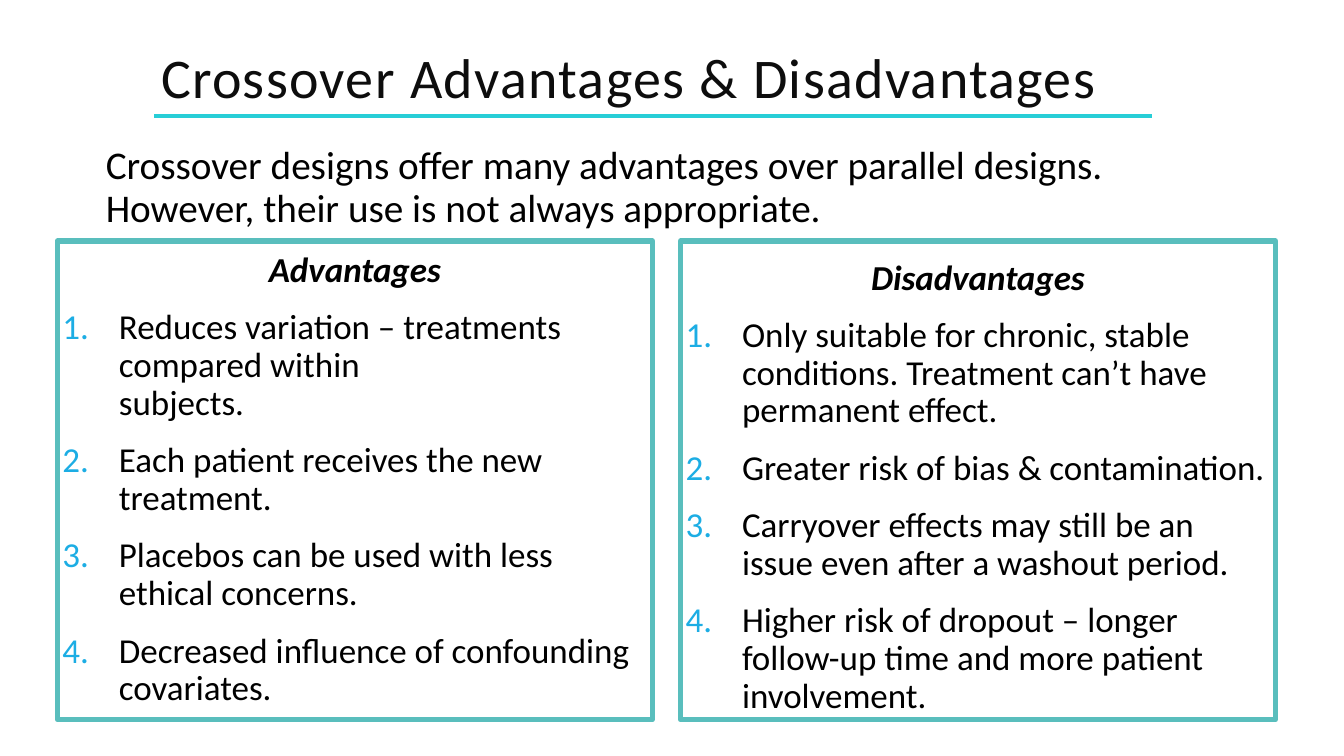
"""Build a slide that sets crossover design advantages beside disadvantages."""
from dataclasses import dataclass

from lxml import etree
from pptx import Presentation
from pptx import util as u
from pptx.dml.color import RGBColor
from pptx.enum import shapes, text
from pptx.oxml.ns import qn


@dataclass(frozen=True)
class Theme:
    """Colours, font and type sizes of the slide."""
    font: str = "Calibri"
    ink: str = "000000"
    title_ink: str = "0D0D0D"
    paper: str = "FFFFFF"
    rule: str = "27CED7"
    border: str = "59BEBD"
    number: str = "1CADE4"
    title_size: int = 40
    intro_size: int = 28
    panel_size: int = 25


THEME = Theme()
WIDTH, HEIGHT = 13.33, 7.5
PANEL_LEFT, PANEL_TOP, PANEL_PITCH = 0.57, 2.39, 6.18
PANEL_WIDTH, PANEL_HEIGHT = 5.9, 4.75
INSET, HANG = 0.05, 0.56

INTRO = ("Crossover designs offer many advantages over parallel designs. "
         "However, their use is not always appropriate.")
PANELS = [
    ("Advantages", (INSET, INSET), [
        "Reduces variation – treatments compared within\vsubjects.",
        "Each patient receives the new treatment.",
        "Placebos can be used with less ethical concerns.",
        "Decreased influence of confounding covariates.",
    ]),
    ("Disadvantages", (3 * INSET, 0), [
        "Only suitable for chronic, stable conditions. "
        "Treatment can’t have permanent effect.",
        "Greater risk of bias & contamination.",
        "Carryover effects may still be an issue even after a washout period.",
        "Higher risk of dropout – longer follow-up time and more patient "
        "involvement.",
    ]),
]


def set_font(paragraph, size, color=THEME.ink, bold=False, italic=False):
    """Format all the text of a paragraph."""
    font = paragraph.font
    font.name, font.size = THEME.font, u.Pt(size)
    font.bold, font.italic = bold, italic
    font.color.rgb = RGBColor.from_string(color)


def set_spacing(paragraph, before, line=0.9, after=2):
    """Set the line spacing and the gaps around a paragraph."""
    paragraph.line_spacing = line
    paragraph.space_before, paragraph.space_after = u.Pt(before), u.Pt(after)


def set_frame(frame, top=INSET, bottom=INSET):
    """Make a text frame wrap, with narrow margins."""
    frame.word_wrap = True
    frame.margin_left = frame.margin_right = u.Inches(INSET)
    frame.margin_top, frame.margin_bottom = u.Inches(top), u.Inches(bottom)


def number_item(paragraph):
    """Give a paragraph a coloured automatic number and a hanging indent."""
    props = paragraph._p.get_or_add_pPr()
    props.set("marL", str(u.Inches(HANG)))
    props.set("indent", str(-u.Inches(HANG)))
    color = etree.SubElement(props, qn("a:buClr"))
    etree.SubElement(color, qn("a:srgbClr"), val=THEME.number)
    etree.SubElement(props, qn("a:buFont"), typeface="+mj-lt")
    etree.SubElement(props, qn("a:buAutoNum"), type="arabicPeriod")


def add_title(slide, wording):
    """Place the title and the rule under it."""
    title = slide.shapes.title
    title.left, title.top = u.Inches(1.25), 0
    title.width, title.height = u.Inches(9.98), u.Inches(1.64)
    frame = title.text_frame
    frame.auto_size = text.MSO_AUTO_SIZE.NONE
    frame.vertical_anchor = text.MSO_ANCHOR.MIDDLE
    heading = frame.paragraphs[0]
    heading.text, heading.alignment = wording, text.PP_ALIGN.CENTER
    set_spacing(heading, 0, line=0.8, after=0)
    set_font(heading, THEME.title_size, THEME.title_ink)
    heading.runs[0]._r.get_or_add_rPr().set("spc", "100")

    rule = slide.shapes.add_connector(
        shapes.MSO_CONNECTOR.STRAIGHT,
        u.Inches(1.53), u.Inches(1.15), u.Inches(11.43), u.Inches(1.15))
    rule.line.color.rgb = RGBColor.from_string(THEME.rule)
    rule.line.width = u.Pt(3)
    etree.SubElement(rule._element.spPr, qn("a:effectLst"))


def add_intro(slide):
    """Add the introductory sentences."""
    intro = slide.shapes.add_textbox(
        u.Inches(1), u.Inches(1.4), u.Inches(10.47), u.Inches(0.95))
    set_frame(intro.text_frame)
    paragraph = intro.text_frame.paragraphs[0]
    paragraph.text = INTRO
    set_spacing(paragraph, 0)
    set_font(paragraph, THEME.intro_size)


def add_panel(slide, column, heading, margins, items):
    """Add one bordered panel with a heading and a numbered list."""
    panel = slide.shapes.add_shape(
        shapes.MSO_SHAPE.RECTANGLE,
        u.Inches(PANEL_LEFT + column * PANEL_PITCH), u.Inches(PANEL_TOP),
        u.Inches(PANEL_WIDTH), u.Inches(PANEL_HEIGHT))
    panel.shadow.inherit = False
    panel.fill.solid()
    panel.fill.fore_color.rgb = RGBColor.from_string(THEME.paper)
    panel.line.color.rgb = RGBColor.from_string(THEME.border)
    panel.line.width = u.Pt(3.75)

    frame = panel.text_frame
    set_frame(frame, *margins)
    frame.vertical_anchor = text.MSO_ANCHOR.MIDDLE
    label = frame.paragraphs[0]
    label.text, label.alignment = heading, text.PP_ALIGN.CENTER
    set_spacing(label, 0)
    set_font(label, THEME.panel_size, bold=True, italic=True)
    for item in items:
        entry = frame.add_paragraph()
        entry.text, entry.alignment = item, text.PP_ALIGN.LEFT
        number_item(entry)
        set_spacing(entry, 12)
        set_font(entry, THEME.panel_size)


def main():
    """Build and save the slide."""
    deck = Presentation()
    deck.slide_width, deck.slide_height = u.Inches(WIDTH), u.Inches(HEIGHT)
    slide = deck.slides.add_slide(deck.slide_layouts[5])
    add_title(slide, "Crossover Advantages & Disadvantages")
    add_intro(slide)
    for column, (heading, margins, items) in enumerate(PANELS):
        add_panel(slide, column, heading, margins, items)
    deck.save("out.pptx")


if __name__ == "__main__":
    main()
